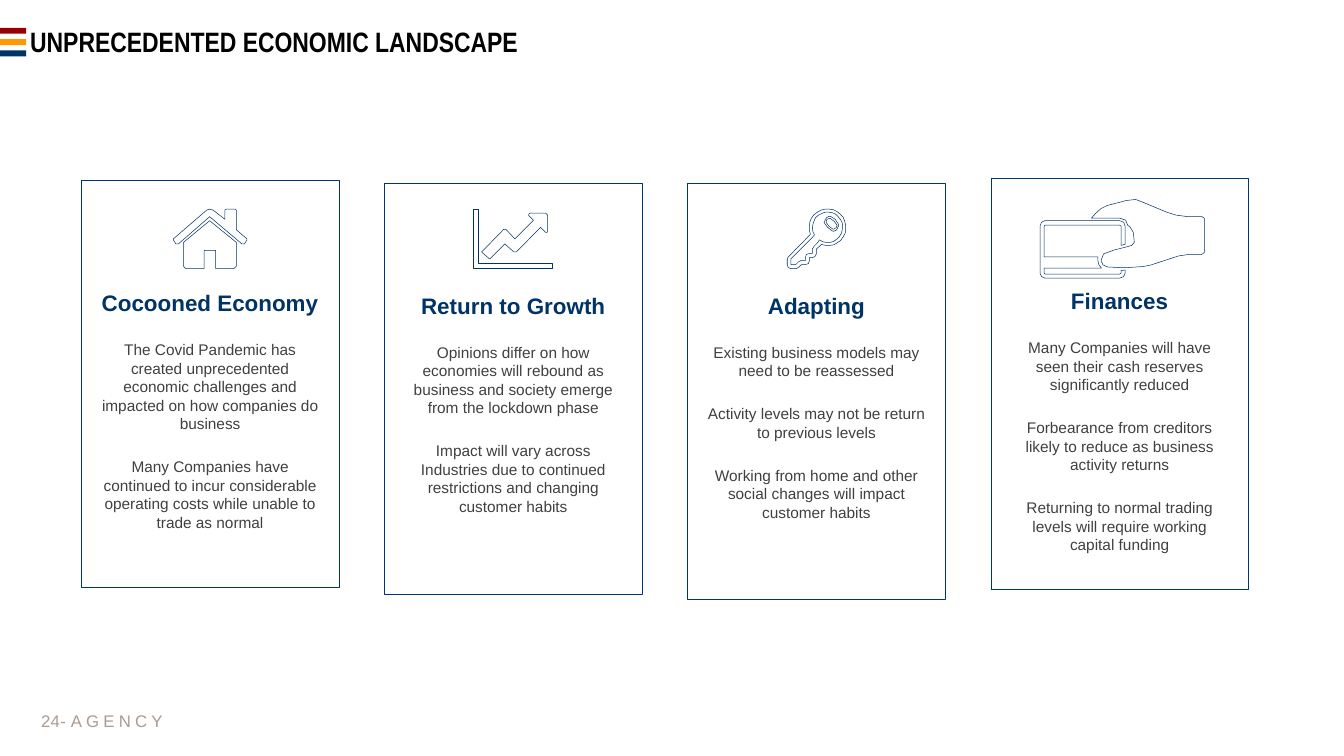
from collections import namedtuple
from math import cos, radians, sin

from pptx import Presentation
from pptx.dml.color import RGBColor
from pptx.enum.shapes import MSO_SHAPE as Preset
from pptx.enum.text import MSO_ANCHOR as Anchor, PP_ALIGN as Align
from pptx.util import Cm, Pt

Box = namedtuple("Box", "left top width height")
Icon = namedtuple("Icon", "left top fill contours")
Card = namedtuple("Card", "top height icon heading paragraphs")


class Theme:
    """Colours, line widths and text formats of the slide."""
    white = "FFFFFF"
    navy = "003366"
    border = "003478"
    stripes = ("990000", "FF9900", navy)
    border_width, icon_width = Pt(0.25), Pt(0.75)
    title = {"name": "Arial Narrow", "size": Pt(40), "bold": True, "color": "000000"}
    heading = {"name": "Arial", "size": Pt(32), "bold": True, "color": navy}
    body = {"name": "Arial", "size": Pt(22), "bold": False, "color": "404040"}
    footer = {"name": "Arial", "size": Pt(24), "bold": False, "color": "AA9C8F"}
    title_paragraph = {"line_spacing": 0.9}
    heading_paragraph = {"alignment": Align.CENTER}
    body_paragraph = {"alignment": Align.CENTER, "space_before": Pt(35),
                      "line_spacing": Pt(26.4)}


def arc(x, y, radius, start, end, steps=24):
    """Return points along a circular arc, angles in degrees."""
    angles = (radians(start + (end - start) * i / steps) for i in range(steps + 1))
    return [(x + radius * cos(a), y + radius * sin(a)) for a in angles]


HOUSE = Icon(4.65, 1.45, None, [
    [(141, 69), (136, 69), (72, 15), (10, 69), (5, 69), (0, 61), (0, 59), (66, 2),
     (72, 0), (79, 2), (102, 20), (102, 2), (105, 0), (123, 0), (125, 2), (125, 41),
     (146, 59), (146, 61)],
    [(125, 113), (120, 118), (84, 118), (84, 82), (61, 82), (61, 118), (25, 118),
     (20, 113), (20, 66), (72, 23), (125, 66)],
])
GROWTH = Icon(4.5, 1.32, None, [
    [(157, 118), (0, 118), (0, 0), (10, 0), (10, 107), (157, 107)],
    [(147, 44), (146, 46), (143, 46), (133, 36), (85, 85), (80, 85), (62, 69),
     (32, 99), (16, 85), (60, 40), (64, 40), (82, 59), (119, 22), (109, 12),
     (111, 8), (143, 8), (147, 12)],
])
KEY = Icon(5.03, 1.32, None, [
    arc(80, 36, 36.5, 158, 470)
    + [(58, 79), (58, 88), (55, 94), (50, 96), (44, 96), (44, 102), (42, 108),
       (36, 110), (28, 110), (23, 115), (18, 118), (7, 118), (2, 116), (0, 110),
       (0, 98), (2, 95)],
    arc(80, 36, 30, 149, 482)
    + [(60, 67), (53, 74), (50, 79), (50, 88), (44, 88), (38, 90), (36, 96),
       (36, 102), (28, 102), (23, 104), (17, 110), (7, 110), (7, 99), (50, 56)],
    [(101, 29), (95, 20), (87, 15), (83, 14), (78, 17), (74, 24), (73, 25), (74, 28),
     (80, 36), (89, 43), (92, 44), (98, 41), (102, 33), (102, 32)],
    [(91, 40), (83, 34), (77, 26), (79, 20), (85, 18), (93, 24), (99, 32), (97, 37)],
])
PAYMENT = Icon(2.49, 1.04, Theme.white, [
    [(158, 43), (10, 43), (3, 46), (0, 54), (0, 147), (3, 154), (10, 157), (158, 157),
     (166, 154), (169, 147), (169, 141), (161, 142), (161, 147), (158, 149), (10, 149),
     (8, 147), (8, 137), (122, 137), (117, 131), (115, 123), (115, 115), (8, 115),
     (8, 54), (10, 52), (158, 52), (161, 54), (161, 92), (169, 90), (169, 54),
     (166, 46)],
    [(102, 38), (110, 29), (121, 19), (133, 13), (164, 5), (171, 3), (190, 1),
     (203, 6), (251, 26), (270, 32), (293, 35), (321, 35), (326, 38), (326, 106),
     (321, 110), (295, 110), (275, 113), (220, 131), (205, 134), (175, 136),
     (156, 136), (135, 135), (125, 131), (121, 122), (126, 109), (148, 101),
     (172, 95), (182, 92), (187, 86), (187, 84), (185, 66), (179, 56), (174, 52),
     (170, 42), (158, 38)],
])

CARDS = [
    Card(9.09, 20.5, HOUSE, "Cocooned Economy", [
        "The Covid Pandemic has created unprecedented economic challenges and "
        "impacted on how companies do business",
        "Many Companies have continued to incur considerable operating costs while "
        "unable to trade as normal"]),
    Card(9.22, 20.7, GROWTH, "Return to Growth", [
        "Opinions differ on how economies will rebound as business and society "
        "emerge from the lockdown phase",
        "Impact will vary across Industries due to continued restrictions and "
        "changing customer habits"]),
    Card(9.22, 20.95, KEY, "Adapting", [
        "Existing business models may need to be reassessed",
        "Activity levels may not be return to previous levels",
        "Working from home and other social changes will impact customer habits"]),
    Card(8.99, 20.68, PAYMENT, "Finances", [
        "Many Companies will have seen their cash reserves significantly reduced",
        "Forbearance from creditors likely to reduce as business activity returns",
        "Returning to normal trading levels will require working capital funding"]),
]


def paint(shape, fill=None, line=None, width=None):
    """Set fill and outline, leaving out whichever is not given."""
    shape.shadow.inherit = False
    for part, color in ((shape.fill, fill), (shape.line.fill, line)):
        if color:
            part.solid()
            part.fore_color.rgb = RGBColor.from_string(color)
        else:
            part.background()
    if line:
        shape.line.width = width


def write(paragraph, text, font_format, paragraph_format):
    """Add a formatted run to a paragraph and return it."""
    for name, value in paragraph_format.items():
        setattr(paragraph, name, value)
    run = paragraph.add_run()
    run.text = text
    for name, value in font_format.items():
        if name == "color":
            run.font.color.rgb = RGBColor.from_string(value)
        else:
            setattr(run.font, name, value)
    return run


def set_frame(frame, side, top=0.13, anchor=Anchor.MIDDLE, wrap=True):
    """Set the margins, anchor and wrapping of a text frame."""
    values = {"margin_left": Cm(side), "margin_right": Cm(side), "margin_top": Cm(top),
              "margin_bottom": Cm(0.13), "vertical_anchor": anchor, "word_wrap": wrap}
    for name, value in values.items():
        setattr(frame, name, value)


def add_text(slide, box, side=0.25, wrap=True):
    """Add a text box and return its first paragraph."""
    frame = slide.shapes.add_textbox(*map(Cm, box)).text_frame
    set_frame(frame, side, wrap=wrap)
    return frame.paragraphs[0]


def add_header(slide, box):
    """Draw the three stripes and the title."""
    for index, color in enumerate(Theme.stripes):
        top = box.top + 0.23 + index * 0.57
        stripe = slide.shapes.add_shape(
            Preset.RECTANGLE, Cm(box.left), Cm(top), Cm(1.32), Cm(0.3))
        paint(stripe, fill=color)
    title = add_text(slide, Box(box.left + 1.27, box.top, box.width - 2.54, box.height))
    write(title, "UNPRECEDENTED ECONOMIC LANDSCAPE", Theme.title, Theme.title_paragraph)


def add_icon(slide, icon, box):
    """Draw an outline icon, its points in hundredths of an inch."""
    first, *others = icon.contours
    builder = slide.shapes.build_freeform(*first[0], scale=Cm(0.0254))
    builder.add_line_segments(first[1:])
    for contour in others:
        builder.move_to(*contour[0])
        builder.add_line_segments(contour[1:])
    shape = builder.convert_to_shape(Cm(box.left + icon.left), Cm(box.top + icon.top))
    paint(shape, icon.fill, Theme.navy, Theme.icon_width)


def add_card(slide, card, box):
    """Draw a bordered card with icon, heading and paragraphs."""
    shape = slide.shapes.add_shape(Preset.RECTANGLE, *map(Cm, box))
    paint(shape, line=Theme.border, width=Theme.border_width)
    frame = shape.text_frame
    set_frame(frame, 1, top=5.48, anchor=Anchor.TOP)
    write(frame.paragraphs[0], card.heading, Theme.heading, Theme.heading_paragraph)
    for text in card.paragraphs:
        write(frame.add_paragraph(), text, Theme.body, Theme.body_paragraph)
    add_icon(slide, card.icon, box)


def add_footer(slide, box):
    """Write the page number and the spaced company name."""
    number = add_text(slide, Box(box.left, box.top, 1.9, box.height), side=0)
    write(number, "24", Theme.footer, {"alignment": Align.RIGHT})
    company = add_text(
        slide, Box(box.left + 1.68, box.top, box.width - 1.68, box.height), wrap=False)
    write(company, "- ", Theme.footer, {"alignment": Align.LEFT})
    name = write(company, "AGENCY", Theme.footer, {})
    name.font._element.set("spc", "600")


def main():
    """Build the slide and save it."""
    presentation = Presentation()
    presentation.slide_width, presentation.slide_height = Cm(67.74), Cm(38.1)
    slide = presentation.slides.add_slide(presentation.slide_layouts[6])
    add_header(slide, Box(0, 1.17, 67.74, 2))
    for index, card in enumerate(CARDS):
        add_card(slide, card, Box(4.09 + index * 15.28, card.top, 13, card.height))
    add_footer(slide, Box(1.12, 35.3, 7.5, 2.03))
    presentation.save("out.pptx")


if __name__ == "__main__":
    main()
